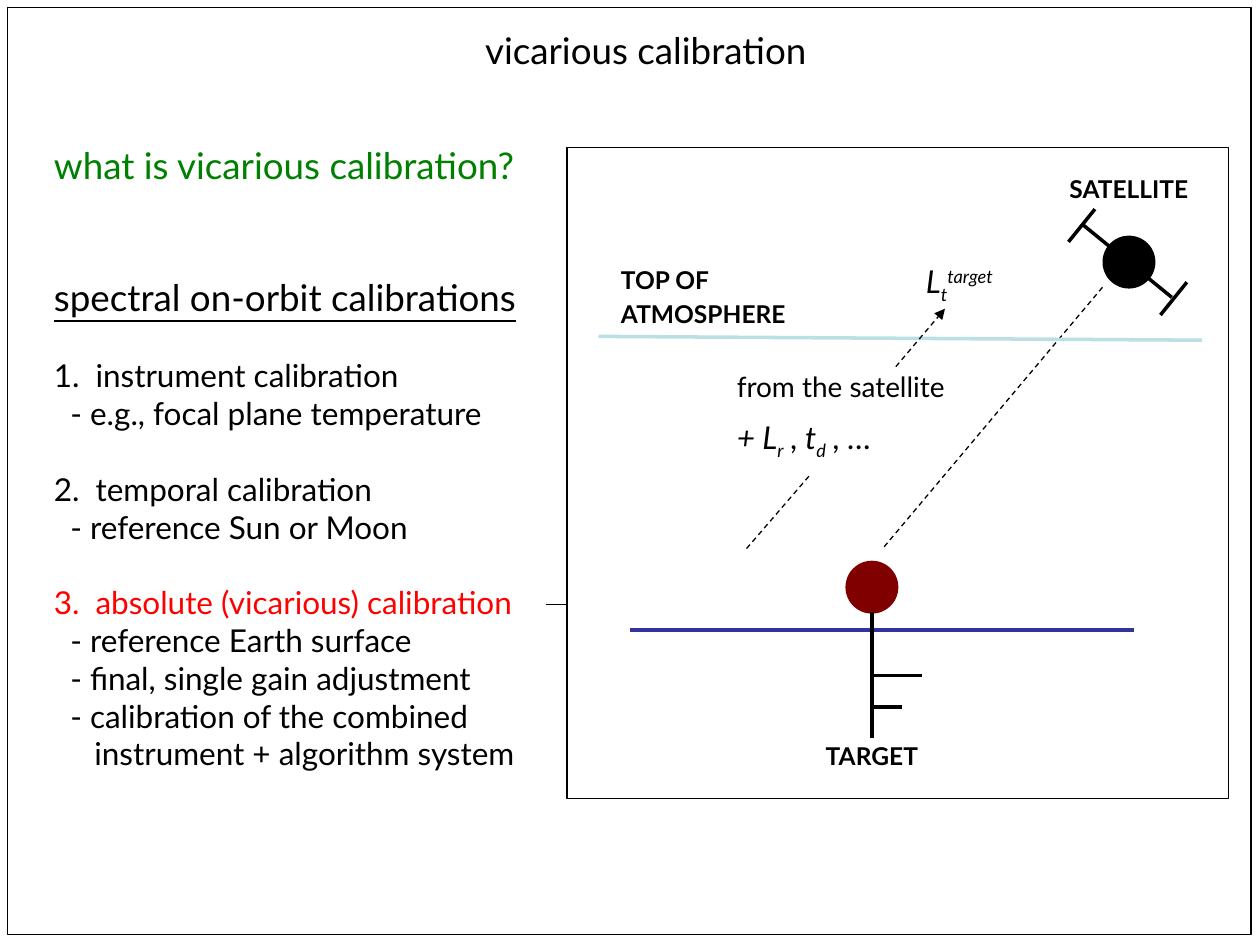
from lxml.etree import SubElement
from pptx import Presentation
from pptx.dml.color import RGBColor
from pptx.enum.dml import MSO_LINE
from pptx.enum.shapes import MSO_CONNECTOR, MSO_SHAPE
from pptx.enum.text import PP_ALIGN
from pptx.oxml.ns import qn
from pptx.util import Inches, Pt

BLACK, GREEN, RED = "000000", "008000", "FF0000"
MAROON, NAVY, SKY = "800000", "333399", "BBE0E3"


def color(value):
    return RGBColor.from_string(value)


class Sketch:
    font = "Lato"
    thin = 0.75
    thick = 2

    def __init__(self, page):
        self.page = page
        self.shapes = page.shapes

    def stroke(self, line, width, tint=BLACK):
        line.color.rgb = color(tint)
        line.width = Pt(width)

    def frame(self, left, top, width, height):
        box = self.shapes.add_shape(
            MSO_SHAPE.RECTANGLE, *map(Inches, (left, top, width, height)))
        box.shadow.inherit = False
        box.fill.background()
        self.stroke(box.line, self.thin)

    def disc(self, left, top, size, tint):
        disc = self.shapes.add_shape(
            MSO_SHAPE.OVAL, *map(Inches, (left, top, size, size)))
        disc.shadow.inherit = False
        disc.fill.solid()
        disc.fill.fore_color.rgb = color(tint)
        disc.line.fill.background()

    def line(self, start, end, width=thick, tint=BLACK, dashed=False, arrow=False):
        line = self.shapes.add_connector(
            MSO_CONNECTOR.STRAIGHT, *map(Inches, (*start, *end)))
        self.stroke(line.line, width, tint)
        if dashed:
            line.line.dash_style = MSO_LINE.DASH
        if arrow:
            SubElement(line.line._get_or_add_ln(), qn("a:tailEnd"), type="triangle")
        SubElement(line._element.spPr, qn("a:effectLst"))

    def curve(self, start, controls, tint):
        builder = self.shapes.build_freeform(*start, scale=Inches(1))
        builder.add_line_segments(controls, close=False)
        wave = builder.convert_to_shape()
        wave.shadow.inherit = False
        wave.fill.background()
        self.stroke(wave.line, self.thick, tint)
        steps = list(wave._element.iter(qn("a:lnTo")))
        outline = steps[0].getparent()
        for first in range(0, len(steps), 3):
            bend = SubElement(outline, qn("a:cubicBezTo"))
            for step in steps[first:first + 3]:
                bend.append(step[0])
                outline.remove(step)

    def text_frame(self, left, top, width, height):
        box = self.shapes.add_textbox(*map(Inches, (left, top, width, height)))
        box.text_frame.word_wrap = True
        return box.text_frame

    def para(self, frame, spans, size, tint=BLACK, before=0, indent=0, hang=0,
             align=PP_ALIGN.LEFT, **style):
        para = frame.paragraphs[0]
        if para.runs:
            para = frame.add_paragraph()
        para.alignment = align
        para.space_before = Pt(before)
        props = para._p.get_or_add_pPr()
        props.set("marL", str(Inches(indent)))
        props.set("indent", str(Inches(-hang)))
        font = para.font
        font.name, font.size, font.color.rgb = self.font, Pt(size), color(tint)
        for name, value in style.items():
            setattr(font, name, value)
        for text, shift in spans:
            span = para.add_run()
            span.text = text
            if shift:
                span._r.get_or_add_rPr().set("baseline", str(shift * 1000))

    def label(self, left, top, width, height, text, size=14, **style):
        frame = self.text_frame(left, top, width, height)
        self.para(frame, [(text, 0)], size, align=PP_ALIGN.CENTER, **style)


def add_outline(sketch):
    frame = sketch.text_frame(0.33, 1.08, 4.25, 5.41)

    def add(text, size=18, **style):
        sketch.para(frame, [(text, 0)], size, **style)

    add("what is vicarious calibration?", 21, tint=GREEN)
    add("spectral on-orbit calibrations", 21, before=50.4, underline=True)
    topics = [
        ("instrument calibration", BLACK, ["e.g., focal plane temperature"]),
        ("temporal calibration", BLACK, ["reference Sun or Moon"]),
        ("absolute (vicarious) calibration", RED,
         ["reference Earth surface", "final, single gain adjustment",
          "calibration of the combined"]),
    ]
    for number, (topic, tint, details) in enumerate(topics, 1):
        add(f"{number}.\t{topic}", tint=tint, before=21.6, indent=0.33, hang=0.33)
        for detail in details:
            add(f"- {detail}", indent=0.13)
    add("instrument + algorithm system", indent=0.32)


def add_target(sketch):
    sketch.curve((4.75, 4.86), [
        (4.92, 4.99), (5.08, 5.11), (5.25, 5.11),
        (5.42, 5.11), (5.57, 4.88), (5.75, 4.86),
        (5.93, 4.85), (6.14, 5.03), (6.33, 5.03),
        (6.53, 5.03), (6.71, 4.86), (6.92, 4.86),
        (7.12, 4.86), (7.38, 5.05), (7.58, 5.03),
        (7.79, 5.02), (7.97, 4.78), (8.17, 4.78),
        (8.36, 4.78), (8.57, 5.03), (8.75, 5.03),
        (8.93, 5.03), (9.17, 4.82), (9.25, 4.78),
    ], NAVY)
    sketch.disc(6.71, 4.45, 0.42, MAROON)
    for start, end in [((6.92, 4.86), (6.92, 5.86)),
                       ((6.91, 5.36), (7.32, 5.36)),
                       ((6.91, 5.61), (7.16, 5.61))]:
        sketch.line(start, end)
    sketch.label(6.21, 5.83, 1.42, 0.33, "TARGET", bold=True)


def add_satellite(sketch):
    sketch.disc(8.75, 1.87, 0.42, BLACK)
    for start, end in [((8.59, 1.78), (9.3, 2.36)),
                       ((8.69, 1.66), (8.48, 1.92)),
                       ((9.42, 2.24), (9.21, 2.5))]:
        sketch.line(start, end)
    sketch.label(8.25, 1.33, 1.42, 0.33, "SATELLITE", bold=True)


def add_atmosphere(sketch):
    sketch.line((8.75, 2.28), (7, 4.36), sketch.thin, dashed=True)
    sketch.line((4.75, 2.67), (9.54, 2.7), tint=SKY)
    frame = sketch.text_frame(4.83, 2.05, 2.5, 0.61)
    sketch.para(frame, [("TOP OF", 0)], 14, bold=True)
    sketch.para(frame, [("ATMOSPHERE", 0)], 14, before=2.8, bold=True)

    frame = sketch.text_frame(5.75, 2.88, 2.17, 0.82)
    sketch.para(frame, [("from the satellite", 0)], 16)
    sketch.para(frame, [("+ L", 0), ("r", -25), (" , t", 0), ("d", -25), (" , …", 0)],
                18, before=9, italic=True)
    sketch.line((6.42, 3.78), (5.92, 4.36), sketch.thin, dashed=True)
    sketch.line((7.11, 2.91), (7.5, 2.45), sketch.thin, dashed=True, arrow=True)
    frame = sketch.text_frame(7.25, 2.03, 0.92, 0.4)
    sketch.para(frame, [("L", 0), ("t", -25), ("target", 30)], 18, italic=True)


def main():
    deck = Presentation()
    deck.slide_width, deck.slide_height = Inches(10), Inches(7.5)
    sketch = Sketch(deck.slides.add_slide(deck.slide_layouts[6]))
    sketch.frame(0.06, 0.06, 9.87, 7.36)
    add_outline(sketch)
    sketch.label(0.5, 0.17, 9.25, 0.45, "vicarious calibration", 21)
    add_target(sketch)
    add_satellite(sketch)
    add_atmosphere(sketch)
    sketch.frame(4.5, 1.17, 5.25, 5.17)
    sketch.line((4.33, 4.8), (4.5, 4.8), sketch.thin)
    deck.save("out.pptx")


if __name__ == "__main__":
    main()
